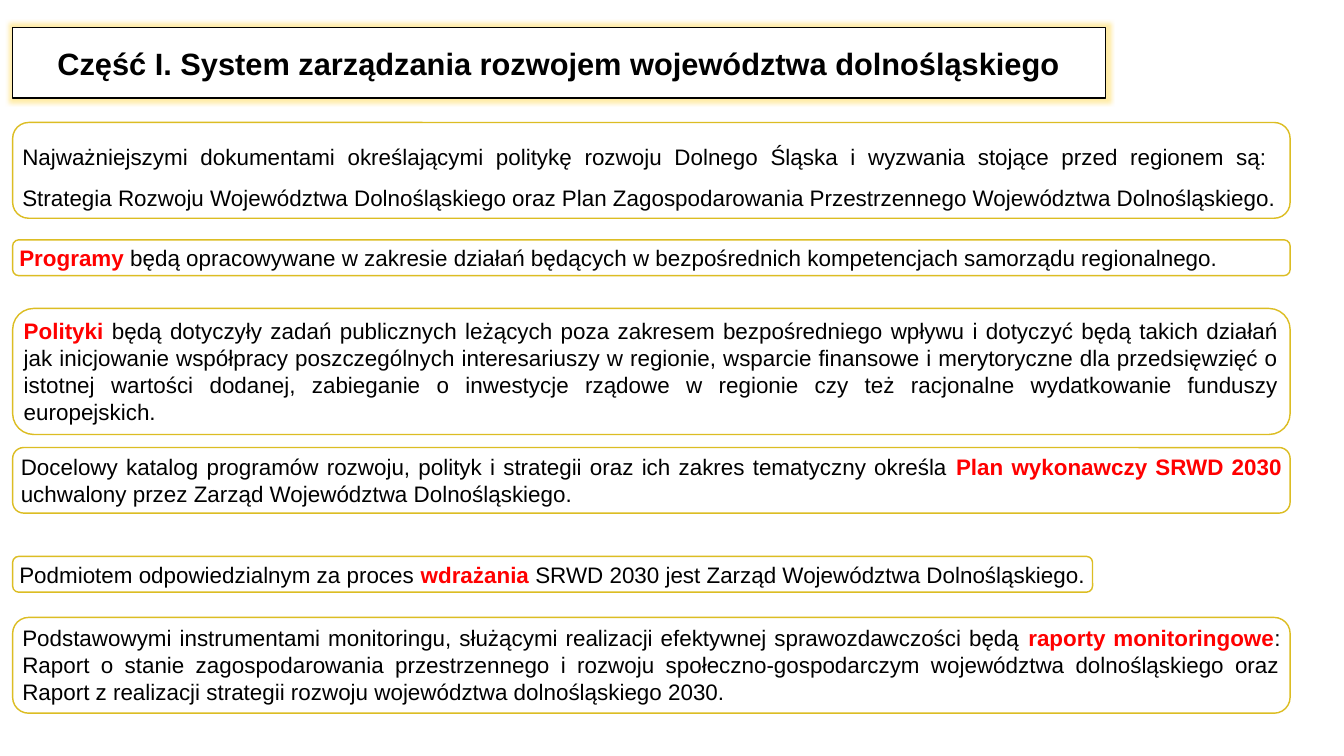
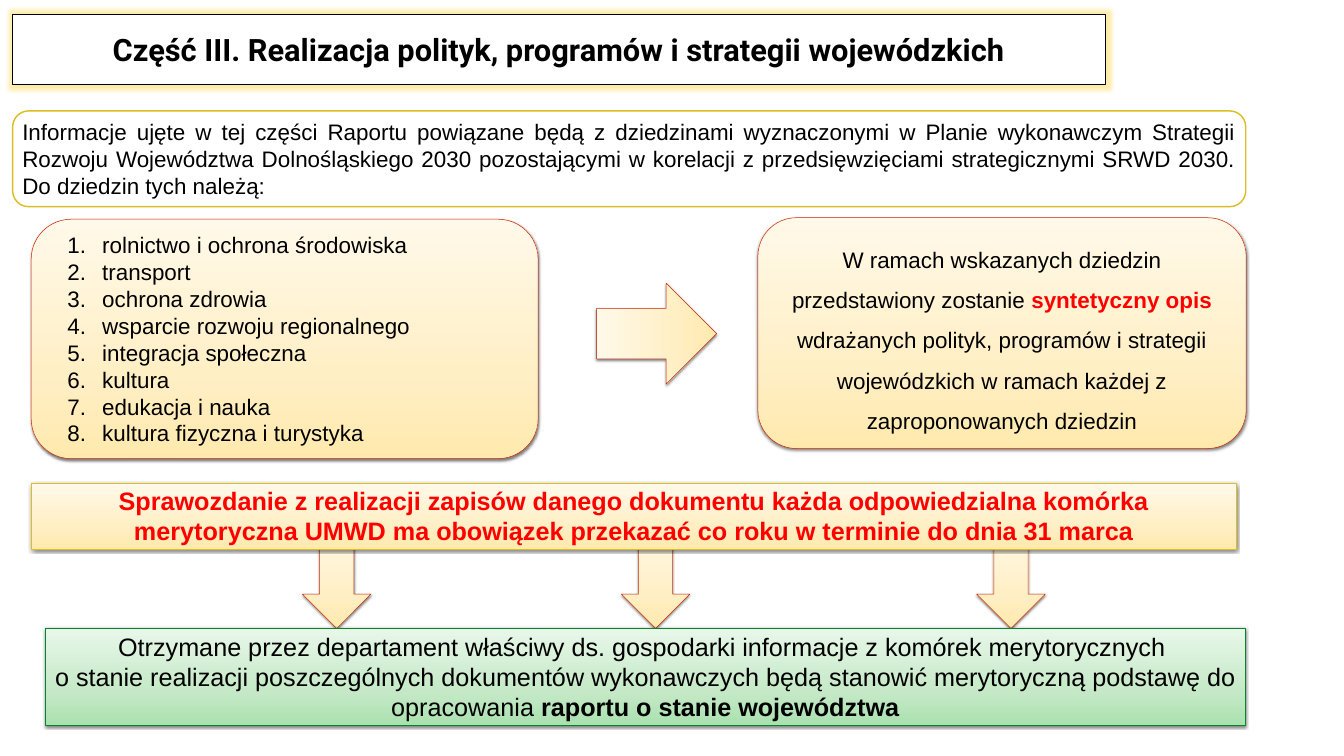
from lxml import etree
from pptx import Presentation
from pptx.dml.color import RGBColor
from pptx.enum.shapes import MSO_SHAPE
from pptx.enum.text import MSO_ANCHOR, MSO_AUTO_SIZE, PP_ALIGN
from pptx.oxml import parse_xml
from pptx.oxml.ns import nsdecls, qn
from pptx.util import Inches, Pt

ROUND = MSO_SHAPE.ROUNDED_RECTANGLE
RECT = MSO_SHAPE.RECTANGLE
DOWN = MSO_SHAPE.DOWN_ARROW
TOP, MIDDLE = MSO_ANCHOR.TOP, MSO_ANCHOR.MIDDLE
LEFT, CENTER, JUSTIFY = PP_ALIGN.LEFT, PP_ALIGN.CENTER, PP_ALIGN.JUSTIFY
GROW, FIXED = MSO_AUTO_SIZE.SHAPE_TO_FIT_TEXT, MSO_AUTO_SIZE.NONE

BLACK = RGBColor(0x00, 0x00, 0x00)
WHITE = RGBColor(0xFF, 0xFF, 0xFF)
RED = RGBColor(0xFF, 0x00, 0x00)
GOLD = RGBColor(0xDC, 0xBD, 0x23)
RUST = RGBColor(0xC8, 0x25, 0x06)
GREEN = RGBColor(0x00, 0x85, 0x2A)
GLOW = RGBColor(0xFF, 0xE0, 0x70)
CREAM = [RGBColor(0xFF, 0xE9, 0xAD), RGBColor(0xFF, 0xEF, 0xC5), RGBColor(0xFF, 0xF9, 0xE9)]
MINT = [RGBColor(0xAA, 0xE1, 0xAF), RGBColor(0xC5, 0xE9, 0xC7), RGBColor(0xE8, 0xF7, 0xE9)]

EDGE = 0.94
WIDE = 95.05


class Deck:
    font = "Arial"
    size = 32

    def __init__(self):
        self.prs = Presentation()
        self.prs.slide_width = Inches(26.67)
        self.prs.slide_height = Inches(15)
        self.slide = None

    def place(self, x, y, w, h):
        col = self.prs.slide_width / 100
        row = self.prs.slide_height / 100
        return [round(n) for n in (x * col, y * row, w * col, h * row)]

    def effect(self, shape, xml):
        shape.shadow.inherit = False
        shape._element.spPr.find(qn("a:effectLst")).append(parse_xml(xml))

    def frame(self, shape, color, width):
        shape.line.color.rgb = color
        shape.line.width = Pt(width)

    def title(self, text, top, font):
        self.slide = self.prs.slides.add_slide(self.prs.slide_layouts[5])
        box = self.slide.shapes.title
        box.left, box.top, box.width, box.height = self.place(EDGE, top, 81.33, 9.27)
        geom = parse_xml(f'<a:prstGeom {nsdecls("a")} prst="roundRect"><a:avLst/></a:prstGeom>')
        box._element.spPr.find(qn("a:xfrm")).addnext(geom)
        box.fill.solid()
        box.fill.fore_color.rgb = WHITE
        self.frame(box, BLACK, 2)
        self.effect(box, f'<a:glow {nsdecls("a")} rad="139700"><a:srgbClr val="{GLOW}">'
                         '<a:alpha val="60000"/></a:srgbClr></a:glow>')
        self.label(box, [text], size=44, align=CENTER, anchor=MIDDLE, fit=FIXED, font=font, bold=True)

    def card(self, x, y, w, h, text, **style):
        box = self.slide.shapes.add_shape(ROUND, *self.place(x, y, w, h))
        box.shadow.inherit = False
        box.fill.solid()
        box.fill.fore_color.rgb = WHITE
        self.frame(box, GOLD, 2)
        self.label(box, [text], **style)

    def panel(self, kind, x, y, w, h, tones=CREAM, edge=RUST):
        box = self.slide.shapes.add_shape(kind, *self.place(x, y, w, h))
        stops = "".join(f'<a:gs pos="{pos}000"><a:srgbClr val="{tone}"/></a:gs>'
                        for pos, tone in zip((0, 35, 100), tones))
        fill = parse_xml(f'<a:gradFill {nsdecls("a")} rotWithShape="1"><a:gsLst>{stops}</a:gsLst>'
                         '<a:lin ang="16200000" scaled="0"/></a:gradFill>')
        box._element.spPr.find(qn("a:prstGeom")).addnext(fill)
        self.frame(box, edge, 0.75)
        self.effect(box, f'<a:outerShdw {nsdecls("a")} blurRad="50800" dist="25400" dir="5400000" '
                         'rotWithShape="0"><a:srgbClr val="000000"><a:alpha val="50000"/>'
                         '</a:srgbClr></a:outerShdw>')
        return box

    def label(self, box, lines, size=size, align=JUSTIFY, anchor=TOP, fit=GROW, font=font,
              color=BLACK, bold=False, accent=RED, space=None, wrap=True, count=False):
        frame = box.text_frame
        frame.word_wrap = wrap
        frame.auto_size = fit
        frame.vertical_anchor = anchor
        for i, line in enumerate(lines):
            para = frame.add_paragraph() if i else frame.paragraphs[0]
            para.alignment = align
            if space:
                para.line_spacing = space
            if count:
                props = para._p.get_or_add_pPr()
                props.set("marL", str(Inches(1.08)))
                props.set("indent", str(Inches(-0.69)))
                etree.SubElement(props, qn("a:buAutoNum"), type="arabicPeriod")
            para.font.name = font
            para.font.size = Pt(size)
            para.font.color.rgb = color
            para.font.bold = bold
            for j, part in enumerate(line.split("*")):
                for k, piece in enumerate(part.split("\n")):
                    if k:
                        para.add_line_break()
                    if piece:
                        run = para.add_run()
                        run.text = piece
                        if j % 2:
                            run.font.bold = True
                            run.font.color.rgb = accent


def system(deck):
    deck.title("Część I. System zarządzania rozwojem województwa dolnośląskiego", 3.67, "Arial")
    cards = [
        (16.2, WIDE, 12.67,
         "Najważniejszymi dokumentami określającymi politykę rozwoju Dolnego Śląska i wyzwania "
         "stojące przed regionem są: \nStrategia Rozwoju Województwa Dolnośląskiego oraz Plan "
         "Zagospodarowania Przestrzennego Województwa Dolnośląskiego.",
         {"space": 1.5, "anchor": MIDDLE}),
        (31.73, WIDE, 4.73,
         "*Programy* będą opracowywane w zakresie działań będących w bezpośrednich kompetencjach "
         "samorządu regionalnego.", {"align": LEFT}),
        (40.8, WIDE, 16.67,
         "*Polityki* będą dotyczyły zadań publicznych leżących poza zakresem bezpośredniego wpływu "
         "i dotyczyć będą takich działań jak inicjowanie współpracy poszczególnych interesariuszy "
         "w regionie, wsparcie finansowe i merytoryczne dla przedsięwzięć o istotnej wartości "
         "dodanej, zabieganie o inwestycje rządowe w regionie czy też racjonalne wydatkowanie "
         "funduszy europejskich.", {}),
        (59.2, WIDE, 8.67,
         "Docelowy katalog programów rozwoju, polityk i strategii oraz ich zakres tematyczny "
         "określa *Plan wykonawczy SRWD 2030 *uchwalony przez Zarząd Województwa Dolnośląskiego.", {}),
        (73.6, 80.35, 4.73,
         "Podmiotem odpowiedzialnym za proces *wdrażania* SRWD 2030 jest Zarząd Województwa "
         "Dolnośląskiego.", {"wrap": False}),
        (81.67, WIDE, 12.67,
         "Podstawowymi instrumentami monitoringu, służącymi realizacji efektywnej sprawozdawczości "
         "będą *raporty monitoringowe*: Raport o stanie zagospodarowania przestrzennego i rozwoju "
         "społeczno-gospodarczym województwa dolnośląskiego oraz Raport z realizacji strategii "
         "rozwoju województwa dolnośląskiego 2030.", {}),
    ]
    for top, width, height, text, style in cards:
        deck.card(EDGE, top, width, height, text, **style)


def policy(deck):
    deck.title("Część III. Realizacja polityk, programów i strategii wojewódzkich", 1.93, "Roboto")
    for x in (22.5, 46.23, 72.67):
        deck.panel(DOWN, x, 69.93, 5.1, 13.2)
    deck.card(EDGE, 14.67, 91.75, 12.67,
              "Informacje ujęte w tej części Raportu powiązane będą z dziedzinami wyznaczonymi w "
              "Planie wykonawczym Strategii Rozwoju Województwa Dolnośląskiego 2030 pozostającymi w "
              "korelacji z przedsięwzięciami strategicznymi SRWD 2030. Do dziedzin tych należą:")

    fields = deck.panel(ROUND, 2.32, 29, 37.72, 31.67)
    deck.label(fields, [
        "rolnictwo i ochrona środowiska",
        "transport",
        "ochrona zdrowia",
        "wsparcie rozwoju regionalnego",
        "integracja społeczna",
        "kultura",
        "edukacja i nauka",
        "kultura fizyczna i turystyka",
    ], align=LEFT, anchor=MIDDLE, fit=FIXED, count=True)

    scope = deck.panel(ROUND, 56.39, 28.8, 36.33, 30.53)
    deck.label(scope, [
        "W ramach wskazanych dziedzin przedstawiony zostanie *syntetyczny opis *wdrażanych "
        "polityk, programów i strategii wojewódzkich w ramach każdej z zaproponowanych dziedzin"
    ], align=CENTER, anchor=MIDDLE, space=1.5)

    arrow = deck.panel(DOWN, 45.11, 36.2, 7.5, 15.87)
    arrow.rotation = 270

    duty = deck.panel(RECT, 2.32, 63.87, 89.69, 8.73, edge=GOLD)
    deck.label(duty, [
        "Sprawozdanie z realizacji zapisów danego dokumentu każda odpowiedzialna komórka "
        "merytoryczna UMWD ma obowiązek przekazać co roku w terminie do dnia 31 marca"
    ], size=36, align=CENTER, color=RED, bold=True)

    result = deck.panel(RECT, 3.34, 83.13, 89.35, 12.8, MINT, GREEN)
    deck.label(result, [
        "Otrzymane przez departament właściwy ds. gospodarki informacje z komórek merytorycznych "
        "\no stanie realizacji poszczególnych dokumentów wykonawczych będą stanowić merytoryczną "
        "podstawę do opracowania *raportu o stanie województwa*"
    ], size=36, align=CENTER, accent=BLACK)


def main():
    deck = Deck()
    system(deck)
    policy(deck)
    deck.prs.save("out.pptx")


if __name__ == "__main__":
    main()
